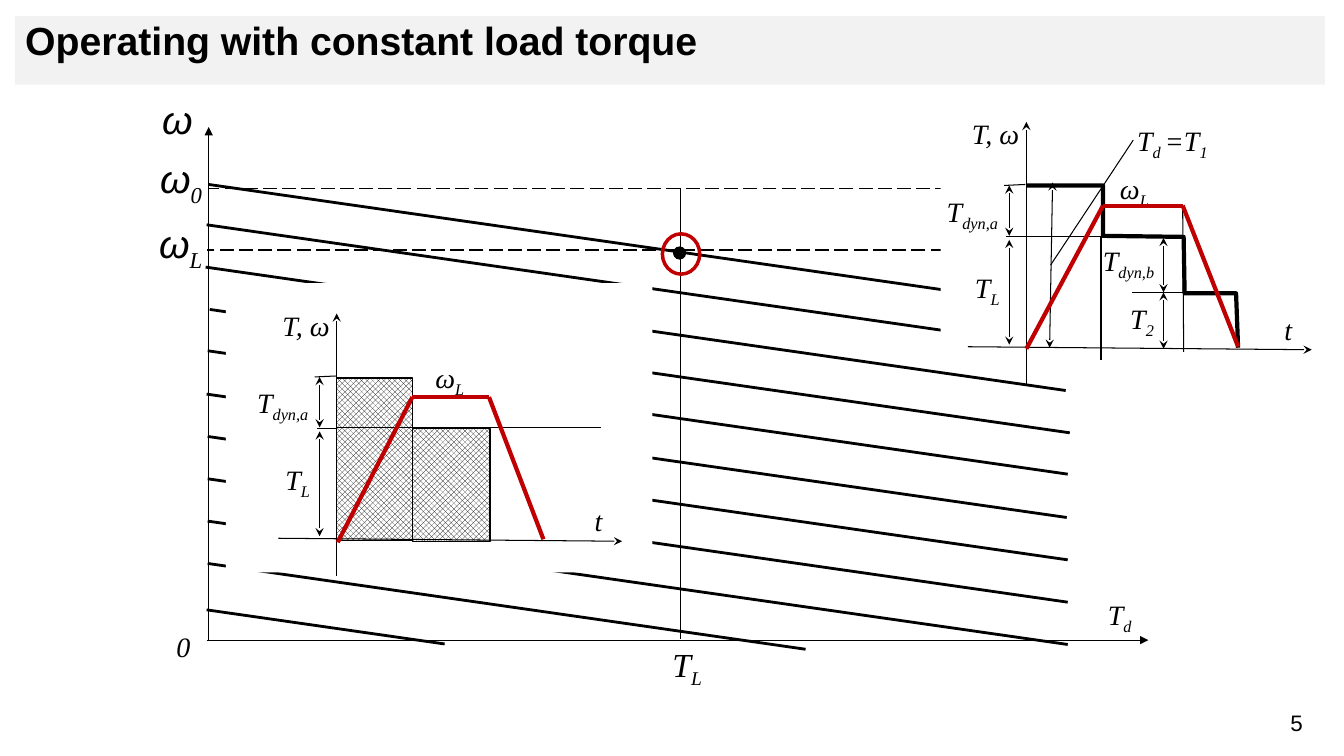
from lxml.etree import SubElement
from pptx import Presentation
from pptx.dml.color import RGBColor
from pptx.enum.dml import MSO_LINE, MSO_PATTERN
from pptx.enum.shapes import MSO_CONNECTOR, MSO_SHAPE
from pptx.enum.text import MSO_ANCHOR, MSO_AUTO_SIZE, PP_ALIGN
from pptx.oxml.ns import qn
from pptx.util import Inches, Pt

TITLE = "Operating with constant load torque"
BLACK, WHITE, RED, GREY = "000000", "FFFFFF", "C00000", "F2F2F2"
SERIF, SANS = "Times New Roman", "Arial"
THIN = {"width": 0.75}
AXIS = {"width": 0.75, "tail": "triangle"}
DASHED = {"width": 1.25, "dash": MSO_LINE.LONG_DASH}
ARROW = {"width": 0.75, "tail": "stealth"}
SPAN_ARROW = {"width": 0.75, "head": "stealth", "tail": "stealth"}
CURVE = {"width": 3, "color": RED}
PLAIN = {"size": 20}
FLUSH = {"size": 20, "inset": 0}
SPEED = {"size": 28, "font": SANS}
NUMBER = {"size": 16, "font": SANS, "italic": False, "align": PP_ALIGN.CENTER}

MAIN_LABELS = [
    (("5",), (12.54, 6.99, 0.64, 0.37), NUMBER),
    (("T", "d"), (10.89, 5.82, 0.66, 0.62), PLAIN),
    (("ω", "L"), (1.48, 2.05, 0.83, 1.02), SPEED),
    (("T", "L"), (6.57, 6.27, 0.74, 0.6), {"size": 24}),
    (("ω",), (1.51, 0.83, 0.55, 0.7), SPEED),
    (("ω", "0"), (1.49, 1.4, 0.83, 1.02), SPEED),
    (("0",), (1.65, 6.15, 0.85, 1), PLAIN),
]
MAIN_LINES = [
    ((2.07, 6.35), (2.07, 1.26), AXIS),
    ((2.05, 6.35), (11.39, 6.35), AXIS),
    ((6.75, 1.87), (6.75, 6.34), THIN),
    ((10.75, 1.87), (2.07, 1.87), DASHED),
    ((10.13, 2.48), (2.05, 2.48), DASHED),
]
SLOPE = 0.1435
FULL_RUN = 8.53
CHARACTERISTICS = [
    (2.07, 1.83, FULL_RUN), (2.05, 2.23, FULL_RUN), (2.04, 2.65, FULL_RUN),
    (2.08, 3.07, FULL_RUN), (2.06, 3.48, FULL_RUN), (2.05, 3.91, FULL_RUN),
    (2.06, 4.33, FULL_RUN), (2.06, 4.75, FULL_RUN), (2.06, 5.17, FULL_RUN),
    (2.06, 5.59, 5.93), (2.05, 6.05, 2.36),
]

SHARED_LABELS = [
    (("t",), (2.46, -0.45, 0.32, 0.5), PLAIN),
    (("T, ω",), (-0.54, -2.34, 0.76, 0.71), FLUSH),
    (("T", "L"), (-0.51, -0.82, 0.38, 0.5), FLUSH),
    (("T", "dyn,a"), (-0.79, -1.58, 0.83, 0.5), FLUSH),
]
SHARED_LINES = [
    ((0, 0.36), (0, -2.24), ARROW),
    ((-0.58, -0.01), (2.83, 0.02), ARROW),
    ((0, -1.1), (-0.2, -1.1), THIN),
    ((-0.01, -1.62), (-0.22, -1.61), THIN),
    ((-0.17, -1.11), (-0.17, -1.61), SPAN_ARROW),
    ((-0.17, -0.03), (-0.17, -1.07), SPAN_ARROW),
]
PANELS = [
    {
        "origin": (3.34, 5.35),
        "backdrop": (-1.1, -2.54, 4.23, 2.87),
        "labels": [(("ω", "L"), (0.88, -1.88, 0.77, 0.59), PLAIN)],
        "bars": [(0.75, -1.1, 0.77, 1.12), (0, -1.6, 0.75, 1.61)],
        "lines": [((0, -1.11), (2.62, -1.11), THIN)],
        "step": [],
        "speed": [(0.01, 0.03), (0.75, -1.41), (1.51, -1.41), (2.05, 0)],
    },
    {
        "origin": (10.18, 3.45),
        "backdrop": (-0.85, -2.35, 3.76, 2.52),
        "labels": [
            (("ω", "L"), (0.83, -1.85, 0.77, 0.59), PLAIN),
            (("T", "d ", "=T", "1"), (1, -2.33, 1.05, 0.65), PLAIN),
            (("T", "dyn,b"), (0.66, -1.14, 1.01, 0.56), PLAIN),
            (("T", "2"), (1.03, -0.52, 0.38, 0.5), FLUSH),
        ],
        "bars": [],
        "lines": [
            ((1.05, -0.55), (2.08, -0.55), THIN),
            ((0.24, -0.82), (1.06, -2.06), THIN),
            ((1.55, -1.41), (1.56, 0.04), THIN),
            ((0, -1.1), (0.76, -1.1), THIN),
            ((0.74, -1.1), (0.74, 0.12), THIN),
            ((1.36, -0.55), (1.36, -1.09), SPAN_ARROW),
            ((1.36, 0.01), (1.36, -0.55), SPAN_ARROW),
            ((0.23, 0), (0.26, -1.64), SPAN_ARROW),
        ],
        "step": [(0, -1.61), (0.76, -1.61), (0.76, -1.11), (1.56, -1.1),
                 (1.57, -0.54), (2.08, -0.54), (2.1, 0)],
        "speed": [(0, 0.01), (0.76, -1.41), (1.55, -1.41), (2.1, -0.01)],
    },
]


def rgb(value):
    return RGBColor.from_string(value)


def set_all(target, values):
    for name, value in values.items():
        setattr(target, name, value)


def shift(place, origin):
    return (place[0] + origin[0], place[1] + origin[1], *place[2:])


def add_label(shapes, parts, place, style):
    box = shapes.add_textbox(*map(Inches, place))
    frame = box.text_frame
    set_all(frame, {"word_wrap": True})
    if "inset" in style:
        for side in ("left", "top", "right", "bottom"):
            setattr(frame, f"margin_{side}", Inches(style["inset"]))
    para = frame.paragraphs[0]
    set_all(para, {"alignment": style.get("align", PP_ALIGN.LEFT),
                   "line_spacing": 1 if "align" in style else 1.15})
    for index, text in enumerate(parts):
        subscript = index % 2 == 1
        span = para.add_run()
        span.text = text
        set_all(span.font, {"size": Pt(style["size"]),
                            "name": SERIF if subscript else style.get("font", SERIF),
                            "italic": style.get("italic", True)})
        span.font.color.rgb = rgb(BLACK)
        if subscript:
            span._r.get_or_add_rPr().set("baseline", "-25000")


def add_line(shapes, start, end, style):
    line = shapes.add_connector(MSO_CONNECTOR.STRAIGHT, *map(Inches, (*start, *end)))
    line.line.color.rgb = rgb(style.get("color", BLACK))
    line.line.width = Pt(style["width"])
    if "dash" in style:
        line.line.dash_style = style["dash"]
    outline = line.line._get_or_add_ln()
    for end_name in ("head", "tail"):
        if end_name in style:
            SubElement(outline, qn(f"a:{end_name}End"), type=style[end_name])
    SubElement(line._element.spPr, qn("a:effectLst"))


def add_figure(shapes, kind, place, fill=None, line=None, width=1):
    figure = shapes.add_shape(kind, *map(Inches, place))
    figure.shadow.inherit = False
    if fill:
        figure.fill.solid()
        figure.fill.fore_color.rgb = rgb(fill)
    else:
        figure.fill.background()
    if line:
        figure.line.color.rgb = rgb(line)
        figure.line.width = Pt(width)
    else:
        figure.line.fill.background()
    return figure


def add_step(shapes, points):
    corners = [tuple(map(Inches, point)) for point in points]
    builder = shapes.build_freeform(*corners[0])
    builder.add_line_segments(corners[1:], close=False)
    step = builder.convert_to_shape()
    step.shadow.inherit = False
    step.fill.background()
    step.line.color.rgb = rgb(BLACK)
    step.line.width = Pt(3)


def add_panel(page, panel):
    shapes = page.shapes.add_group_shape().shapes
    origin = panel["origin"]
    add_figure(shapes, MSO_SHAPE.RECTANGLE, shift(panel["backdrop"], origin), WHITE)
    for parts, place, style in SHARED_LABELS + panel["labels"]:
        add_label(shapes, parts, shift(place, origin), style)
    for place in panel["bars"]:
        bar = add_figure(shapes, MSO_SHAPE.RECTANGLE, shift(place, origin), line=BLACK)
        bar.fill.patterned()
        bar.fill.pattern = MSO_PATTERN.OUTLINED_DIAMOND
        bar.fill.fore_color.rgb = rgb(BLACK)
        bar.fill.back_color.rgb = rgb(WHITE)
    for start, end, style in SHARED_LINES + panel["lines"]:
        add_line(shapes, shift(start, origin), shift(end, origin), style)
    if panel["step"]:
        add_step(shapes, [shift(point, origin) for point in panel["step"]])
    for start, end in zip(panel["speed"], panel["speed"][1:]):
        add_line(shapes, shift(start, origin), shift(end, origin), CURVE)


def main():
    deck = Presentation()
    set_all(deck, {"slide_width": Inches(13.33), "slide_height": Inches(7.5)})
    page = deck.slides.add_slide(deck.slide_layouts[5])
    title = page.shapes.title
    set_all(title, {"left": Inches(0.15), "top": Inches(0.16),
                    "width": Inches(12.99), "height": Inches(0.68)})
    title.fill.solid()
    title.fill.fore_color.rgb = rgb(GREY)
    title.text_frame.text = TITLE
    set_all(title.text_frame, {"vertical_anchor": MSO_ANCHOR.TOP, "word_wrap": True,
                               "auto_size": MSO_AUTO_SIZE.NONE})
    para = title.text_frame.paragraphs[0]
    set_all(para, {"alignment": PP_ALIGN.LEFT, "line_spacing": 0.9})
    set_all(para.runs[0].font, {"size": Pt(28), "name": SANS, "bold": True})
    para.runs[0].font.color.rgb = rgb(BLACK)

    for parts, place, style in MAIN_LABELS:
        add_label(page.shapes, parts, place, style)
    for start, end, style in MAIN_LINES:
        add_line(page.shapes, start, end, style)
    for left, top, run in CHARACTERISTICS:
        add_line(page.shapes, (left, top), (left + run, top + run * SLOPE), {"width": 2})
    add_figure(page.shapes, MSO_SHAPE.OVAL, (6.68, 2.45, 0.12, 0.12), BLACK, BLACK, 0.75)
    add_figure(page.shapes, MSO_SHAPE.OVAL, (6.57, 2.32, 0.37, 0.4), line=RED, width=2.5)
    for panel in PANELS:
        add_panel(page, panel)
    deck.save("out.pptx")


if __name__ == "__main__":
    main()
